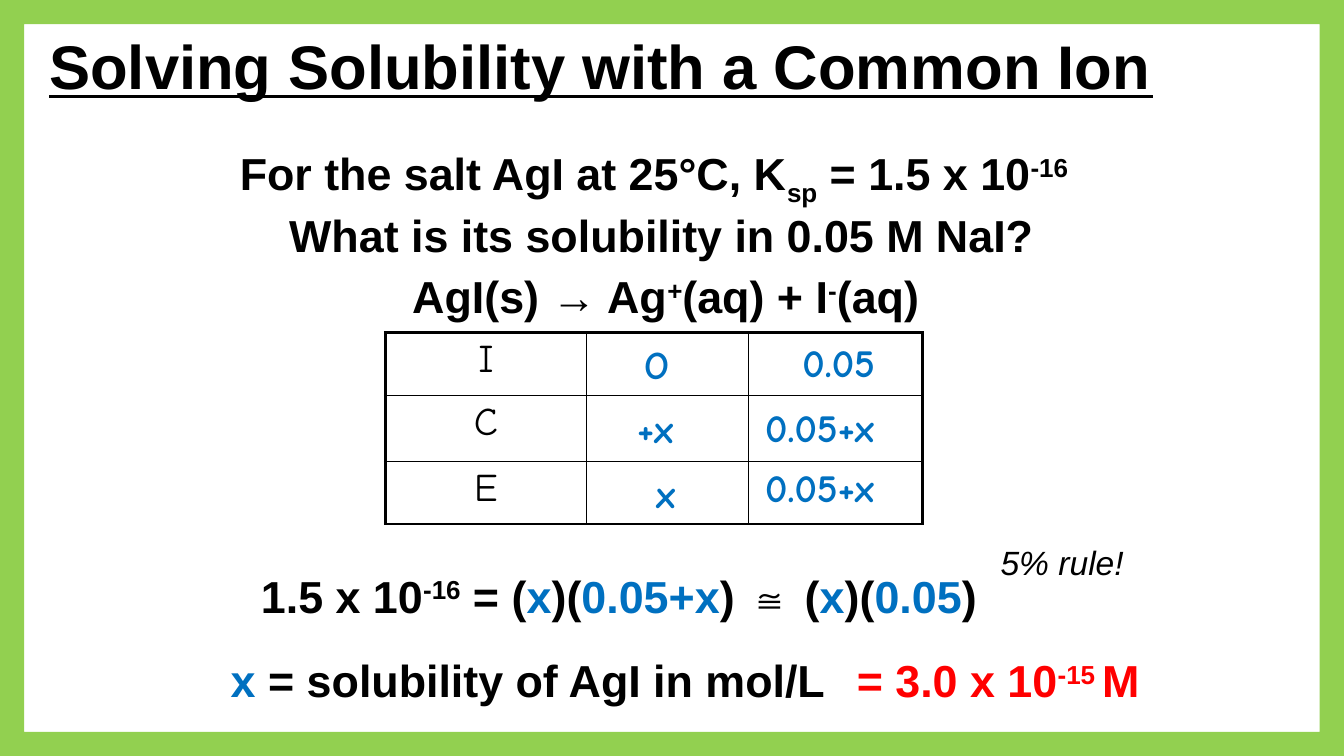
from lxml import etree
from pptx import Presentation
from pptx.dml.color import RGBColor
from pptx.enum import shapes, text
from pptx.oxml import ns
from pptx.util import Inches, Pt

BLACK, BLUE, RED, GREEN = "000000", "0070C0", "FF0000", "92D050"
HAND_FONT = "Comic Neue"
SUPER, SUB = 30, -25
COLUMNS = [2, 1.6, 1.73]
ROWS = [0.62, 0.66, 0.62]


def color(value):
    return RGBColor.from_string(value)


def format_run(run, size, name="Arial", value=BLACK, bold=True):
    run.font.size = Pt(size)
    run.font.name = name
    run.font.bold = bold
    run.font.color.rgb = color(value)


def fill_paragraph(paragraph, parts, size=32, name="Arial", bold=True):
    """Each part is (text, colour, baseline shift in percent)."""
    for content, value, shift in parts:
        run = paragraph.add_run()
        run.text = content
        format_run(run, size, name, value, bold)
        if shift:
            run.font._element.set("baseline", str(shift * 1000))


def add_text(slide, box, lines, wrap=False, **style):
    """Place one paragraph per line and return the text frame."""
    frame = slide.shapes.add_textbox(*map(Inches, box)).text_frame
    frame.word_wrap = wrap
    for index, parts in enumerate(lines):
        paragraph = frame.add_paragraph() if index else frame.paragraphs[0]
        fill_paragraph(paragraph, parts, **style)
    return frame


def add_title(slide, box):
    frame = add_text(slide, box,
                     [[("Solving Solubility with a Common Ion", BLACK, 0)]],
                     wrap=True, size=44)
    frame.vertical_anchor = text.MSO_ANCHOR.MIDDLE
    paragraph = frame.paragraphs[0]
    paragraph.alignment = text.PP_ALIGN.CENTER
    paragraph.runs[0].font.underline = True


def add_question(slide, left, top):
    frame = add_text(slide, (left, top, 9.01, 1.18), [
        [("For the salt AgI at 25°C, K", BLACK, 0), ("sp", BLACK, SUB),
         (" = 1.5 x 10", BLACK, 0), ("-16", BLACK, SUPER)],
        [("What is its solubility in 0.05 M NaI?", BLACK, 0)],
    ], wrap=True)
    frame.paragraphs[1]._p.get_or_add_pPr().set("marL", str(Inches(0.49)))
    add_text(slide, (left + 1.71, top + 1.22, 5.29, 0.64), [
        [("AgI(s) → Ag", BLACK, 0), ("+", BLACK, SUPER),
         ("(aq) + I", BLACK, 0), ("-", BLACK, SUPER), ("(aq)", BLACK, 0)]])


def set_borders(cell, widths):
    """Widths in points, in the order left, right, top, bottom."""
    properties = cell._tc.get_or_add_tcPr()
    for index, (side, width) in enumerate(zip("LRTB", widths)):
        line = etree.Element(ns.qn(f"a:ln{side}"), w=str(Pt(width)))
        fill = etree.SubElement(line, ns.qn("a:solidFill"))
        etree.SubElement(fill, ns.qn("a:srgbClr"), val=BLACK)
        properties.insert(index, line)


def add_ice_table(slide, left, top):
    table = slide.shapes.add_table(
        len(ROWS), len(COLUMNS), Inches(left), Inches(top),
        Inches(sum(COLUMNS)), Inches(sum(ROWS))).table
    table.first_row = table.horz_banding = False
    for column, width in zip(table.columns, COLUMNS):
        column.width = Inches(width)
    for row, height in zip(table.rows, ROWS):
        row.height = Inches(height)
    last_row, last_column = len(ROWS) - 1, len(COLUMNS) - 1
    for r in range(len(ROWS)):
        for c in range(len(COLUMNS)):
            cell = table.cell(r, c)
            cell.fill.background()
            outer = (c == 0, c == last_column, r == 0, r == last_row)
            set_borders(cell, [2.25 if edge else 1 for edge in outer])
    for r, letter in enumerate("ICE"):
        paragraph = table.cell(r, 0).text_frame.paragraphs[0]
        paragraph.text = letter
        paragraph.alignment = text.PP_ALIGN.CENTER
        paragraph.space_before = Pt(5.6)
        format_run(paragraph.runs[0], 28, HAND_FONT, bold=False)

    answers = [
        ("0.05", 4.04, 0.01, 1.08), ("O", 2.47, 0.03, 0.51),
        ("+x", 2.4, 0.66, 0.67), ("0.05+x", 3.67, 0.65, 1.55),
        ("x", 2.59, 1.31, 0.43), ("0.05+x", 3.67, 1.25, 1.55),
    ]
    for content, x, y, width in answers:
        add_text(slide, (left + x, top + y, width, 0.57),
                 [[(content, BLUE, 0)]], size=28, name=HAND_FONT)


def add_solution(slide, left, top):
    add_text(slide, (left + 0.3, top, 8.82, 0.64), [
        [("1.5 x 10", BLACK, 0), ("-16", BLACK, SUPER), (" = (", BLACK, 0),
         ("x", BLUE, 0), (")(", BLACK, 0), ("0.05+x", BLUE, 0),
         (") ≅ (", BLACK, 0), ("x", BLUE, 0), (")(", BLACK, 0),
         ("0.05", BLUE, 0), (")", BLACK, 0)]], wrap=True)
    add_text(slide, (left, top + 0.84, 6.15, 0.64), [
        [("x", BLUE, 0), (" = solubility of AgI in mol/L", BLACK, 0)]])
    add_text(slide, (left + 6.21, top + 0.84, 3.1, 0.64), [
        [("= 3.0 x 10", RED, 0), ("-15 ", RED, SUPER), ("M", RED, 0)]])
    frame = add_text(slide, (left + 6.96, top - 0.26, 2.77, 0.5),
                     [[("5% rule!", BLACK, 0)]],
                     wrap=True, size=24, bold=False)
    paragraph = frame.paragraphs[0]
    paragraph.alignment = text.PP_ALIGN.CENTER
    paragraph.runs[0].font.italic = True


def add_green_frame(slide, width, height):
    shape = slide.shapes.add_shape(
        shapes.MSO_SHAPE.FRAME, 0, 0, width, height)
    shape.adjustments[0] = 0.032
    shape.shadow.inherit = False
    shape.fill.solid()
    shape.fill.fore_color.rgb = color(GREEN)
    shape.line.fill.background()


def main():
    presentation = Presentation()
    presentation.slide_width = Inches(13.33)
    presentation.slide_height = Inches(7.5)
    slide = presentation.slides.add_slide(presentation.slide_layouts[6])
    add_green_frame(slide, presentation.slide_width, presentation.slide_height)
    add_title(slide, (0.25, 0.13, 11.42, 1.03))
    add_question(slide, 2.28, 1.4)
    add_ice_table(slide, 3.82, 3.3)
    add_solution(slide, 2.19, 5.59)
    presentation.save("out.pptx")


if __name__ == "__main__":
    main()
